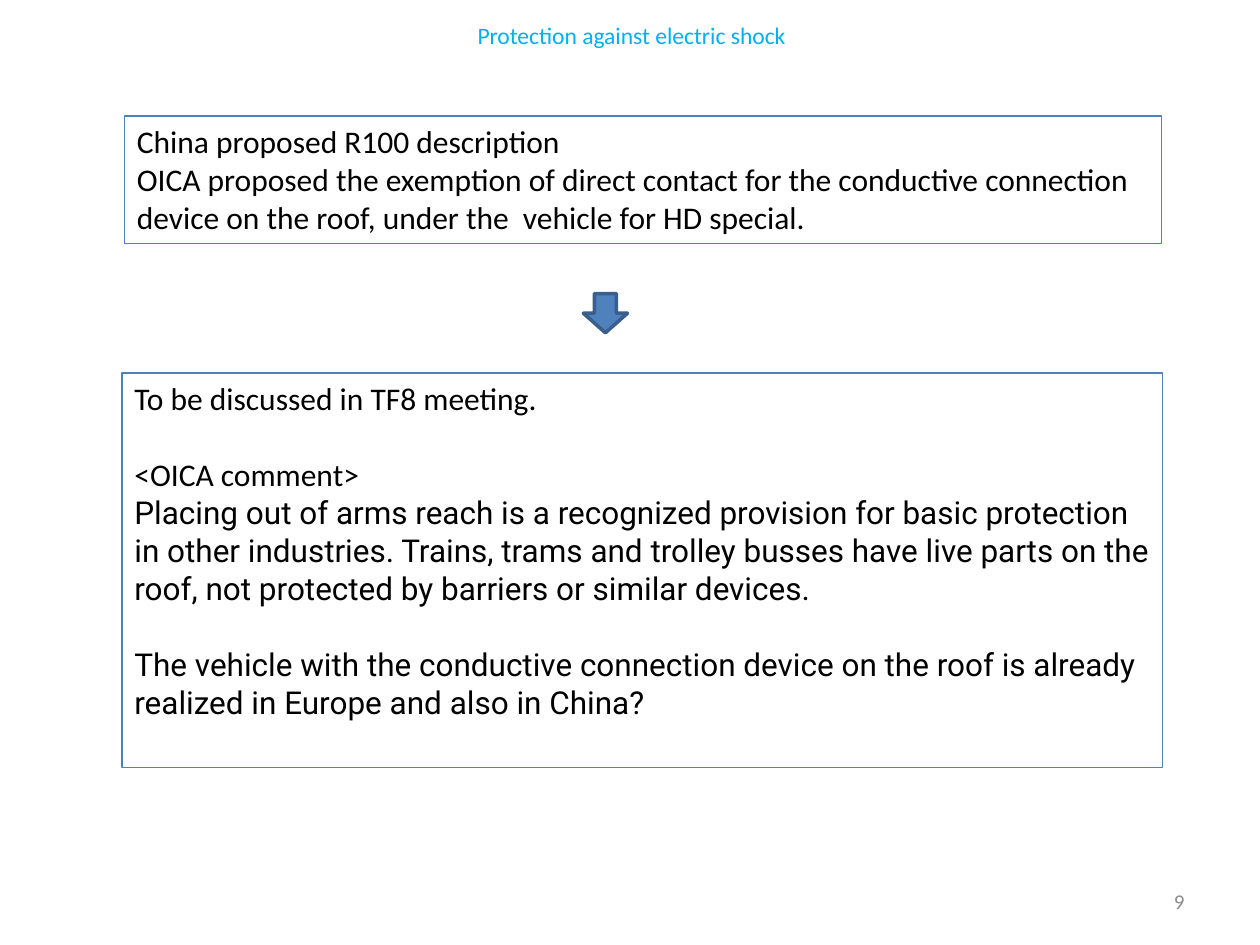
from pptx import Presentation
from pptx.dml.color import RGBColor
from pptx.enum.shapes import MSO_SHAPE as Shape
from pptx.enum.text import MSO_ANCHOR as Anchor, MSO_AUTO_SIZE as AutoSize, PP_ALIGN as Align
from pptx.util import Cm, Pt

COLORS = {"text": "000000", "title": "00B0F0", "number": "8C8C8C",
          "blue": "4F81BD", "arrow_edge": "3A5F8C"}
BLANK_LINE = 22


def color(name):
    return RGBColor.from_string(COLORS[name])


def write(frame, paragraphs, size, ink, anchor=Anchor.TOP, align=Align.LEFT):
    """Fill a frame with (text, font name, space before) paragraphs."""
    frame.word_wrap = True
    frame.auto_size = AutoSize.NONE
    frame.vertical_anchor = anchor
    for i, (text, font_name, gap) in enumerate(paragraphs):
        paragraph = frame.add_paragraph() if i else frame.paragraphs[0]
        paragraph.text = text
        paragraph.alignment = align
        if gap:
            paragraph.space_before = Pt(gap)
        for key, value in {"name": font_name, "size": Pt(size)}.items():
            setattr(paragraph.font, key, value)
        paragraph.font.color.rgb = color(ink)


prs = Presentation()
prs.slide_width, prs.slide_height = Cm(25.4), Cm(19.05)
slide = prs.slides.add_slide(prs.slide_layouts[5])

# Title
title = slide.shapes.title
title_place = {"left": Cm(1.3), "top": Cm(0.33), "width": Cm(22.86), "height": Cm(0.76)}
for key, value in title_place.items():
    setattr(title, key, value)
write(title.text_frame, [("Protection against electric shock", "Calibri", 0)],
      13.5, "title", Anchor.MIDDLE, Align.CENTER)

# Proposals and the discussion that follows from them
proposals = [
    ("China proposed R100 description", "Calibri", 0),
    ("OICA proposed the exemption of direct contact for the conductive connection "
     "device on the roof, under the  vehicle for HD special.", "Calibri", 0),
]
discussion = [
    ("To be discussed in TF8 meeting.", "Calibri", 0),
    ("<OICA comment>", "Calibri", BLANK_LINE),
    ("Placing out of arms reach is a recognized provision for basic protection in "
     "other industries. Trains, trams and trolley busses have live parts on the "
     "roof, not protected by barriers or similar devices.", "Roboto", 0),
    ("The vehicle with the conductive connection device on the roof is already "
     "realized in Europe and also in China?", "Roboto", BLANK_LINE),
]
for place, paragraphs in [((2.51, 2.34, 20.9, 2.57), proposals),
                          ((2.46, 7.52, 20.98, 7.95), discussion)]:
    panel = slide.shapes.add_shape(Shape.RECTANGLE, *map(Cm, place))
    panel.shadow.inherit = False
    panel.fill.background()
    panel.line.color.rgb = color("blue")
    panel.line.width = Pt(0.75)
    write(panel.text_frame, paragraphs, 18, "text")

# Arrow from proposals to discussion
arrow = slide.shapes.add_shape(Shape.DOWN_ARROW, Cm(11.76), Cm(5.92), Cm(0.89), Cm(0.79))
arrow.shadow.inherit = False
arrow.fill.solid()
arrow.fill.fore_color.rgb = color("blue")
arrow.line.color.rgb = color("arrow_edge")
arrow.line.width = Pt(2)

# Page number
page_number = slide.shapes.add_textbox(Cm(18.21), Cm(17.65), Cm(5.92), Cm(1.02))
write(page_number.text_frame, [("9", "Calibri", 0)], 12, "number", Anchor.MIDDLE, Align.RIGHT)

prs.save("out.pptx")
